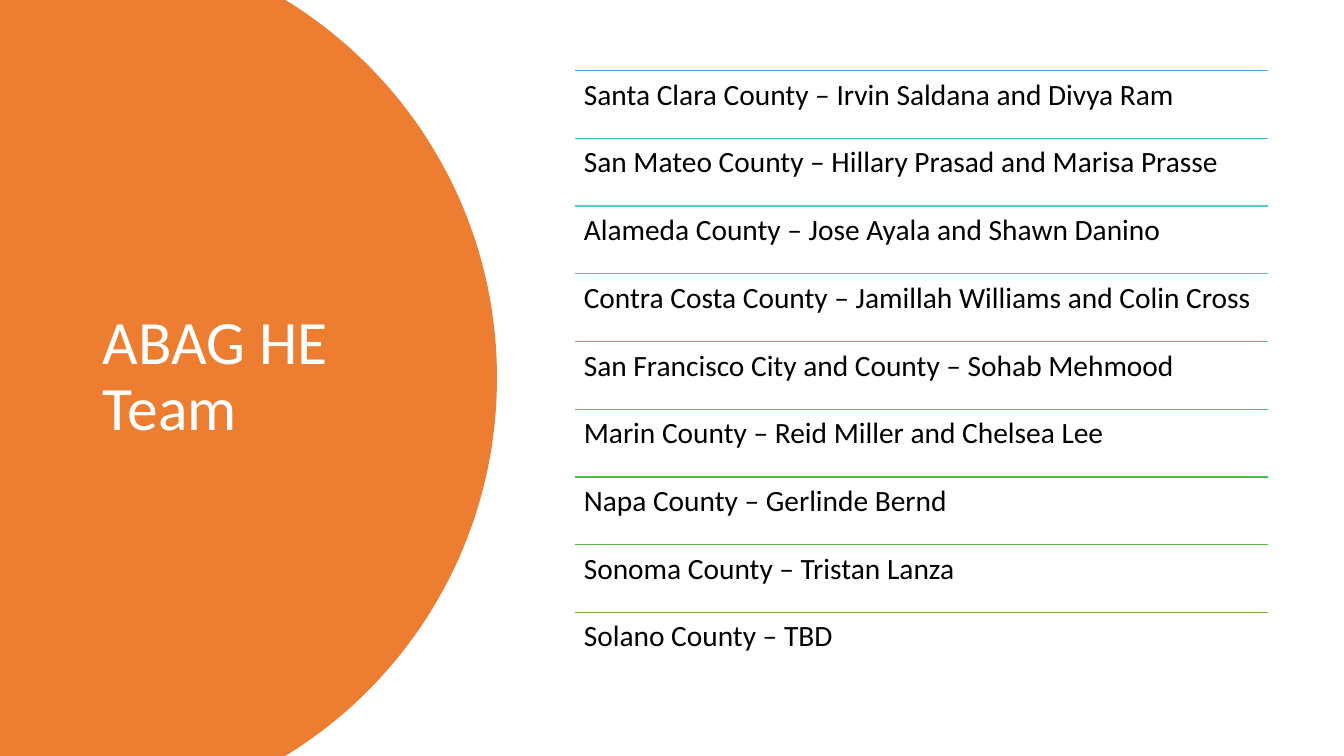
from lxml import etree
from pptx import Presentation
from pptx.dml.color import RGBColor
from pptx.enum import shapes, text
from pptx.oxml import ns
from pptx.util import Inches, Pt

# Content
TITLE = "ABAG HE Team"
TEAM = [  # county and staff, colour of the rule above
    ("Santa Clara County – Irvin Saldana and Divya Ram", "blue"),
    ("San Mateo County – Hillary Prasad and Marisa Prasse", "sky"),
    ("Alameda County – Jose Ayala and Shawn Danino", "cyan"),
    ("Contra Costa County – Jamillah Williams and Colin Cross", "teal"),
    ("San Francisco City and County – Sohab Mehmood", "jade"),
    ("Marin County – Reid Miller and Chelsea Lee", "mint"),
    ("Napa County – Gerlinde Bernd", "green"),
    ("Sonoma County – Tristan Lanza", "grass"),
    ("Solano County – TBD", "olive"),
]
COLORS = {
    "panel": "ED7D31", "title": "FFFFFF", "body": "000000",
    "blue": "5B9BD5", "sky": "57B4D1", "cyan": "54CCCD",
    "teal": "51C9AD", "jade": "4DC58D", "mint": "4AC06E",
    "green": "48BB4F", "grass": "59B546", "olive": "70AD47",
}

# Layout, in inches
SLIDE_WIDTH, SLIDE_HEIGHT = 13.33, 7.5
LIST_LEFT, LIST_TOP, LIST_WIDTH = 5.7, 0.7, 6.88
ROW_HEIGHT = 0.672
UPPER_ARC = [(2.83, 0), (4.09, 0.77), (4.93, 2.16), (4.93, 3.75)]
ARC_STEPS = 40

# Text formats
TITLE_FRAME = {"word_wrap": True, "auto_size": text.MSO_AUTO_SIZE.NONE,
               "vertical_anchor": text.MSO_ANCHOR.MIDDLE}
ROW_FRAME = {"word_wrap": True, "vertical_anchor": text.MSO_ANCHOR.TOP,
             "margin_left": Inches(0.09), "margin_right": Inches(0.09),
             "margin_top": Inches(0.09), "margin_bottom": Inches(0.09)}
PARAGRAPH = {"alignment": text.PP_ALIGN.LEFT, "line_spacing": 0.9}


def color(name):
    return RGBColor.from_string(COLORS[name])


def apply(target, values):
    for name, value in values.items():
        setattr(target, name, value)


def write(shape, words, size, color_name, frame_format):
    frame = shape.text_frame
    frame.text = words
    apply(frame, frame_format)
    paragraph = frame.paragraphs[0]
    apply(paragraph, PARAGRAPH)
    font = paragraph.runs[0].font
    apply(font, {"name": "Calibri", "size": Pt(size)})
    font.color.rgb = color(color_name)


def bezier(points, t):
    weights = [(1 - t) ** 3, 3 * t * (1 - t) ** 2, 3 * t ** 2 * (1 - t), t ** 3]
    return tuple(sum(w * point[axis] for w, point in zip(weights, points))
                 for axis in (0, 1))


def add_panel(slide):
    upper = [bezier(UPPER_ARC, step / ARC_STEPS) for step in range(ARC_STEPS + 1)]
    lower = [(x, SLIDE_HEIGHT - y) for x, y in reversed(upper[:-1])]
    builder = slide.shapes.build_freeform(0, 0, scale=Inches(1) / 1000)
    outline = upper + lower + [(0, SLIDE_HEIGHT)]
    builder.add_line_segments([(x * 1000, y * 1000) for x, y in outline], close=True)
    panel = builder.convert_to_shape()
    panel.shadow.inherit = False
    panel.fill.solid()
    panel.fill.fore_color.rgb = color("panel")
    panel.line.fill.background()
    return panel


def add_row(slide, index, words, color_name):
    top = Inches(LIST_TOP + index * ROW_HEIGHT)
    left, width = Inches(LIST_LEFT), Inches(LIST_WIDTH)
    rule = slide.shapes.add_connector(
        shapes.MSO_CONNECTOR.STRAIGHT, left, top, left + width, top)
    rule.line.color.rgb = color(color_name)
    rule.line.width = Pt(1)
    etree.SubElement(rule.element.spPr, ns.qn("a:effectLst"))
    box = slide.shapes.add_textbox(left, top, width, Inches(ROW_HEIGHT))
    write(box, words, 21, "body", ROW_FRAME)


def main():
    presentation = Presentation()
    presentation.slide_width = Inches(SLIDE_WIDTH)
    presentation.slide_height = Inches(SLIDE_HEIGHT)
    slide = presentation.slides.add_slide(
        presentation.slide_layouts.get_by_name("Title Only"))

    # Title, with the round panel behind it
    title = slide.shapes.title
    apply(title, {"left": Inches(0.92), "top": Inches(0.7),
                  "width": Inches(3.23), "height": Inches(6.09)})
    write(title, TITLE, 44, "title", TITLE_FRAME)
    title.element.addprevious(add_panel(slide).element)

    # Team list
    for index, (words, color_name) in enumerate(TEAM):
        add_row(slide, index, words, color_name)

    presentation.save("out.pptx")


if __name__ == "__main__":
    main()
